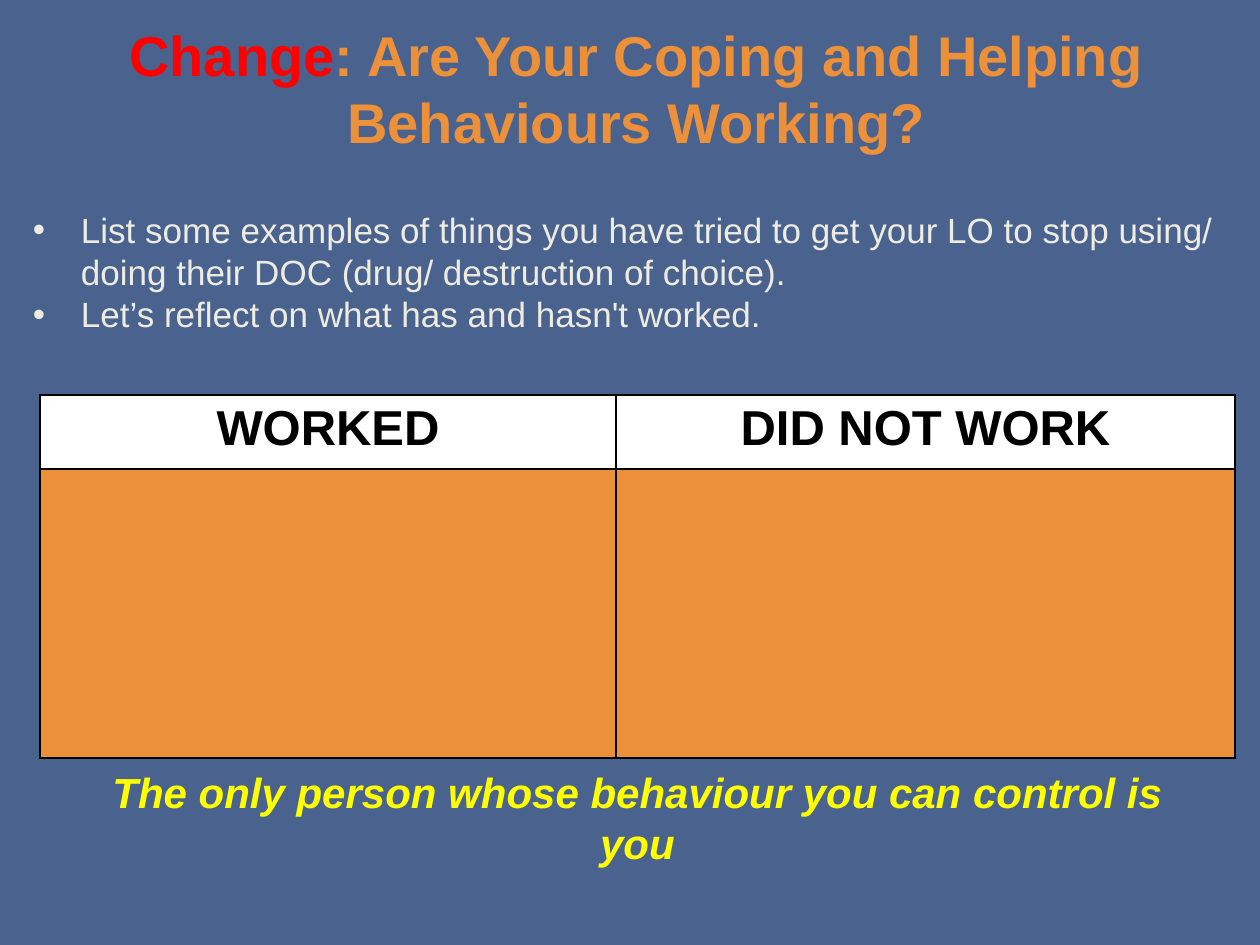
from lxml import etree
from pptx import Presentation
from pptx.dml.color import RGBColor
from pptx.enum.text import MSO_ANCHOR, PP_ALIGN
from pptx.oxml.ns import qn
from pptx.util import Pt

CENTER, LEFT = PP_ALIGN.CENTER, PP_ALIGN.LEFT
TOP, MIDDLE = MSO_ANCHOR.TOP, MSO_ANCHOR.MIDDLE
PX_PER_INCH = 126
FONT = "Arial"
COLORS = {
    "background": "49628E",
    "orange": "EC9039",
    "red": "FF0000",
    "cream": "EEECE1",
    "yellow": "FFFF00",
    "white": "FFFFFF",
    "black": "000000",
}


def px(length):
    return round(length * 914400 / PX_PER_INCH)


def color(name):
    return RGBColor.from_string(COLORS[name])


def style_run(run, size, color_name, bold=False, italic=False):
    run.font.name = FONT
    run.font.size = Pt(size)
    run.font.bold = bold
    run.font.italic = italic
    run.font.color.rgb = color(color_name)


def add_bullet(paragraph, indent):
    properties = paragraph._p.get_or_add_pPr()
    properties.set("marL", str(px(indent)))
    properties.set("indent", str(-px(indent)))
    etree.SubElement(properties, qn("a:buFont"), typeface=FONT)
    etree.SubElement(properties, qn("a:buChar"), char="•")


def add_text(slide, box, paragraphs, size, align=LEFT, anchor=TOP,
             bullet_indent=0, **emphasis):
    """Each paragraph is a list of (text, color name) runs."""
    frame = slide.shapes.add_textbox(*map(px, box)).text_frame
    frame.word_wrap = True
    frame.vertical_anchor = anchor
    frame.margin_left = frame.margin_right = px(9)
    frame.margin_top = frame.margin_bottom = px(5)
    for index, runs in enumerate(paragraphs):
        paragraph = frame.paragraphs[0] if index == 0 else frame.add_paragraph()
        paragraph.alignment = align
        if bullet_indent:
            add_bullet(paragraph, bullet_indent)
        for text, color_name in runs:
            run = paragraph.add_run()
            run.text = text
            style_run(run, size, color_name, **emphasis)


def add_borders(cell):
    properties = cell._tc.get_or_add_tcPr()
    for position, side in enumerate(("a:lnL", "a:lnR", "a:lnT", "a:lnB")):
        line = etree.Element(qn(side), w=str(Pt(1)))
        fill = etree.SubElement(line, qn("a:solidFill"))
        etree.SubElement(fill, qn("a:srgbClr"), val=COLORS["black"])
        properties.insert(position, line)


def add_reflection_table(slide, left, top, widths, heights, headings):
    table = slide.shapes.add_table(
        len(heights), len(widths), px(left), px(top),
        px(sum(widths)), px(sum(heights))).table
    for column, width in zip(table.columns, widths):
        column.width = px(width)
    for row, height in zip(table.rows, heights):
        row.height = px(height)

    # White headings above empty orange answer areas
    for cell in table.iter_cells():
        cell.fill.solid()
        cell.fill.fore_color.rgb = color("orange")
        add_borders(cell)
    for cell, heading in zip(table.rows[0].cells, headings):
        cell.fill.fore_color.rgb = color("white")
        cell.text = heading
        paragraph = cell.text_frame.paragraphs[0]
        paragraph.alignment = CENTER
        style_run(paragraph.runs[0], 28, "black", bold=True)


def main():
    presentation = Presentation()
    presentation.slide_width, presentation.slide_height = px(1260), px(945)
    slide = presentation.slides.add_slide(presentation.slide_layouts[6])
    slide.background.fill.solid()
    slide.background.fill.fore_color.rgb = color("background")

    # Title
    add_text(slide, (40, 37, 1193, 101),
             [[("Change", "red"),
               (": Are Your Coping and Helping Behaviours Working?", "orange")]],
             32, CENTER, MIDDLE, bold=True)

    # Instructions
    instructions = [
        "List some examples of things you have tried to get your LO to stop "
        "using/ doing their DOC (drug/ destruction of choice).",
        "Let’s reflect on what has and hasn't worked.",
    ]
    add_text(slide, (24, 204, 1211, 137),
             [[(text, "cream")] for text in instructions],
             20, bullet_indent=48)

    # Reflection table
    add_reflection_table(slide, 40, 395, (576, 619), (74, 289),
                         ("WORKED", "DID NOT WORK"))

    # Closing message
    add_text(slide, (66, 762, 1143, 111),
             [[("The only person whose behaviour you can control is you", "yellow")]],
             24, CENTER, bold=True, italic=True)

    presentation.save("out.pptx")


if __name__ == "__main__":
    main()
